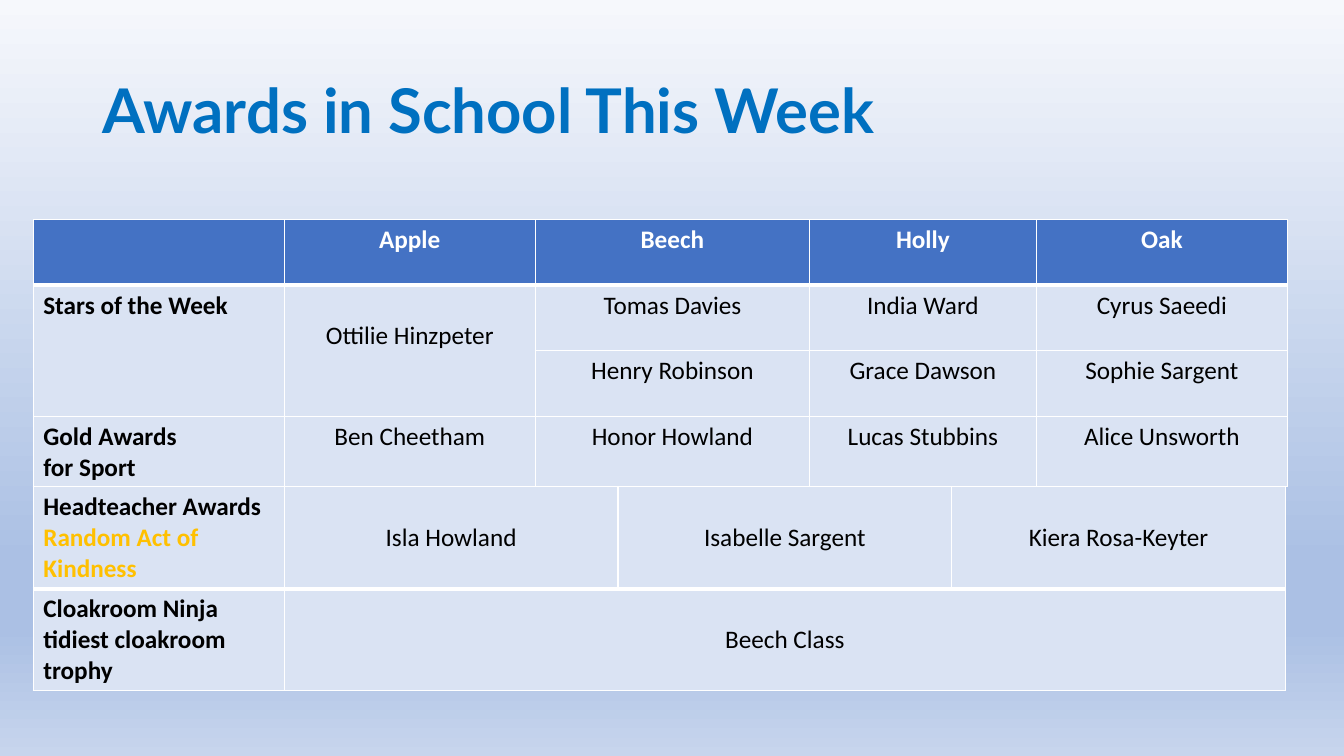
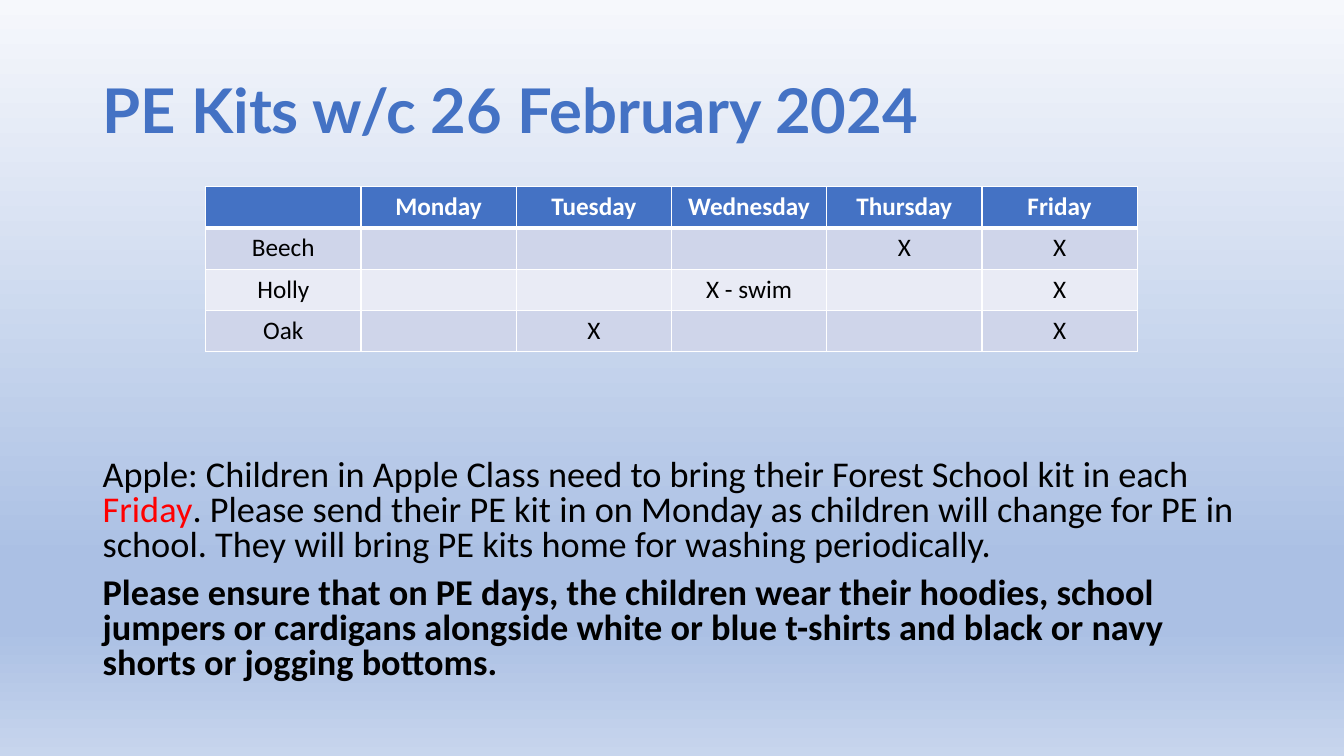
from lxml import etree
from pptx import Presentation
from pptx.dml.color import RGBColor
from pptx.enum import text as t
from pptx.oxml import ns
from pptx.util import Inches, Pt

HUE = {
    "white": "FFFFFF", "black": "000000", "blue": "4472C4", "sky": "0070C0",
    "pale": "DAE3F3", "band": "CFD5EA", "light": "E9EBF5",
    "gold": "FFC000", "red": "FF0000",
}
FADE = [(0, "F6F8FC"), (74, "ABC0E4"), (83, "ABC0E4"), (100, "C7D5ED")]


def style(run, size, hue, bold=False, face="Calibri"):
    run.font.name, run.font.size, run.font.bold = face, Pt(size), bold
    run.font.color.rgb = RGBColor.from_string(HUE[hue])


def grid(slide, left, top, cols, rows, data, fills, spans=(), labels=False):
    """Add a table; row 0 has a thick rule below, labels are bold and left."""
    frame = slide.shapes.add_table(
        len(rows), len(cols), Inches(left), Inches(top),
        Inches(sum(cols)), Inches(sum(rows)))
    table = frame.table
    for col, width in zip(table.columns, cols):
        col.width = Inches(width)
    for row, height in zip(table.rows, rows):
        row.height = Inches(height)
    for first, last in spans:
        table.cell(*first).merge(table.cell(*last))
    for r, line in enumerate(data):
        for c, words in enumerate(line):
            cell = table.cell(r, c)
            props = cell._tc.get_or_add_tcPr()
            wide = {"lnL": 1, "lnR": 1, "lnT": 3 if r == 1 else 1,
                    "lnB": 3 if r == 0 else 1}
            for side, width in wide.items():
                edge = etree.SubElement(props, ns.qn("a:" + side), w=str(Pt(width)))
                solid = etree.SubElement(edge, ns.qn("a:solidFill"))
                etree.SubElement(solid, ns.qn("a:srgbClr"), val=HUE["white"])
            cell.fill.solid()
            cell.fill.fore_color.rgb = RGBColor.from_string(HUE[fills[r]])
            if not words:
                continue
            cell.text_frame.text = words
            label = labels and c == 0
            head = fills[r] == "blue"
            for para in cell.text_frame.paragraphs:
                para.alignment = t.PP_ALIGN.LEFT if label else t.PP_ALIGN.CENTER
                for run in para.runs:
                    style(run, 18, "white" if head else "black", head or label)
    return table


deck = Presentation()
deck.slide_width, deck.slide_height = Inches(13.33), Inches(7.5)

# Shared background on the master
back = deck.slide_master.background.fill
back.gradient()
back.gradient_angle = 270
stops = deck.slide_master.element.xpath(".//a:gsLst")[0]
for stop in list(stops):
    stops.remove(stop)
for place, hue in FADE:
    stop = etree.SubElement(stops, ns.qn("a:gs"), pos=str(place * 1000))
    etree.SubElement(stop, ns.qn("a:srgbClr"), val=hue)

# Slides with their titles
pages = []
for title, hue in [("Awards in School This Week", "sky"),
                   ("PE Kits w/c 26 February 2024", "blue")]:
    page = deck.slides.add_slide(deck.slide_layouts[6])
    box = page.shapes.add_textbox(Inches(0.92), Inches(0.4), Inches(11.5), Inches(1.45))
    body = box.text_frame
    body.word_wrap = True
    body.vertical_anchor = t.MSO_ANCHOR.MIDDLE
    body.text = title
    body.paragraphs[0].line_spacing = 0.9
    style(body.paragraphs[0].runs[0], 44, hue, True, "Lato")
    pages.append(page)
awards, kits = pages

# Class awards
stars = grid(
    awards, 0.33, 2.18, [2.49, 2.49, 2.72, 2.25, 2.49], [0.65, 0.65, 0.65, 0.7],
    [["", "Apple", "Beech", "Holly", "Oak"],
     ["Stars of the Week", "Ottilie Hinzpeter", "Tomas Davies", "India Ward", "Cyrus Saeedi"],
     ["", "", "Henry Robinson", "Grace Dawson", "Sophie Sargent"],
     ["Gold Awards\nfor Sport", "Ben Cheetham", "Honor Howland", "Lucas Stubbins",
      "Alice Unsworth"]],
    ["blue", "pale", "pale", "pale"],
    spans=[((1, 0), (2, 0)), ((1, 1), (2, 1))], labels=True)
stars.cell(1, 1).margin_top = Inches(0.35)

# School awards
school = grid(
    awards, 0.33, 4.83, [2.49, 3.31, 3.31, 3.31], [1.01, 1.01],
    [["Headteacher Awards ", "Isla Howland", "Isabelle Sargent", "Kiera Rosa-Keyter"],
     ["Cloakroom Ninja tidiest cloakroom trophy", "Beech Class", "", ""]],
    ["pale", "pale"], spans=[((1, 1), (1, 3))], labels=True)
for row in school.rows:
    for cell in row.cells:
        cell.vertical_anchor = t.MSO_ANCHOR.MIDDLE
kind = school.cell(0, 0).text_frame.paragraphs[0].add_run()
kind.text = "Random Act of Kindness"
style(kind, 18, "gold", True)

# PE days
grid(
    kits, 2.04, 1.85, [1.54] * 6, [0.41] * 4,
    [["", "Monday", "Tuesday", "Wednesday", "Thursday", "Friday"],
     ["Beech", "", "", "", "X", "X"],
     ["Holly", "", "", "X - swim", "", "X"],
     ["Oak", "", "X", "", "", "X"]],
    ["blue", "band", "light", "band"])

# Kit notes
box = kits.shapes.add_textbox(Inches(0.92), Inches(4.51), Inches(11.5), Inches(2.25))
body = box.text_frame
body.word_wrap = True
notes = [
    [("Apple: Children in Apple Class need to bring their Forest School kit in each ",
      "black", False),
     ("Friday", "red", False),
     (". Please send their PE kit in on Monday as children will change for PE in school. "
      "They will bring PE kits home for washing periodically.", "black", False)],
    [("Please ensure that on PE days, the children wear their hoodies, school jumpers or "
      "cardigans alongside white or blue t-shirts and black or navy shorts or jogging "
      "bottoms.", "black", True)],
]
for i, note in enumerate(notes):
    para = body.add_paragraph() if i else body.paragraphs[0]
    para.line_spacing = 0.8
    para.space_before = Pt(10 if i else 0)
    for words, hue, bold in note:
        run = para.add_run()
        run.text = words
        style(run, 25.9, hue, bold)

deck.save("out.pptx")
